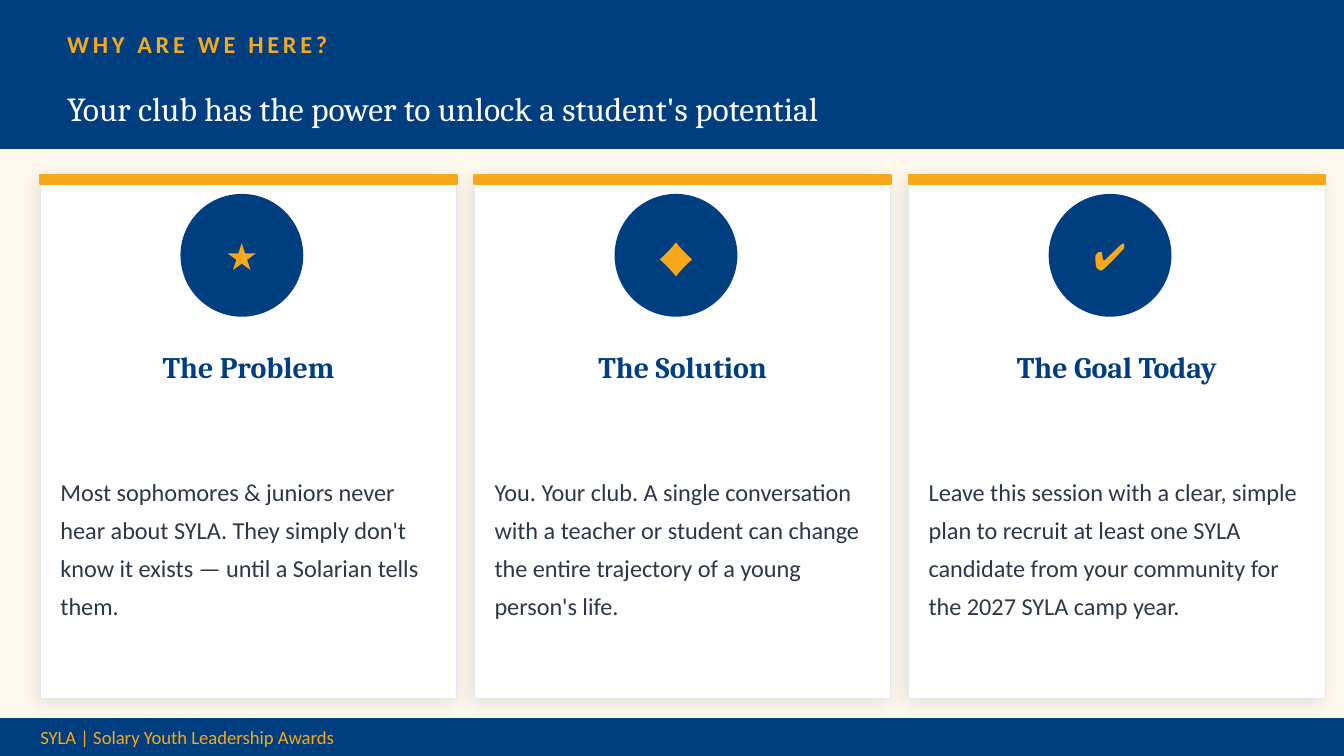
from pptx import Presentation
from pptx.dml.color import RGBColor
from pptx.enum.shapes import MSO_SHAPE as Shape
from pptx.enum.text import MSO_ANCHOR as Anchor, PP_ALIGN as Align
from pptx.oxml import parse_xml
from pptx.oxml.ns import nsdecls
from pptx.util import Pt

PX = 4572  # 200 px to the inch
WIDE, HIGH = 2000, 1125
NAVY, GOLD, WHITE = "003F7F", "F7A81B", "FFFFFF"
CREAM, EDGE, INK = "FFF8EC", "E2E8F0", "2D3748"
SANS, SERIF = "Calibri", "Cambria"

CARDS = [
    ("★", "The Problem",
     "Most sophomores & juniors never hear about SYLA. They simply don't "
     "know it exists — until a Solarian tells them."),
    ("♦", "The Solution",
     "You. Your club. A single conversation with a teacher or student can "
     "change the entire trajectory of a young person's life."),
    ("✔", "The Goal Today",
     "Leave this session with a clear, simple plan to recruit at least one "
     "SYLA candidate from your community for the 2027 SYLA camp year."),
]


def paint(color, code):
    color.rgb = RGBColor.from_string(code)


def block(slide, box, fill, kind=Shape.RECTANGLE, edge=None, width=1):
    shape = slide.shapes.add_shape(kind, *(n * PX for n in box))
    shape.shadow.inherit = False
    shape.fill.solid()
    paint(shape.fill.fore_color, fill)
    paint(shape.line.color, edge or fill)
    shape.line.width = Pt(width)
    return shape


def label(slide, box, text, size, color, face=SANS, bold=False,
          align=Align.LEFT, lead=None):
    frame = slide.shapes.add_textbox(*(n * PX for n in box)).text_frame
    frame.word_wrap = True
    frame.vertical_anchor = Anchor.MIDDLE
    frame.margin_left = frame.margin_right = 0
    frame.margin_top = frame.margin_bottom = 0
    para = frame.paragraphs[0]
    para.text = text
    para.alignment = align
    if lead:
        para.line_spacing = lead
    font = para.font
    font.size, font.name, font.bold = Pt(size), face, bold
    paint(font.color, color)
    return para


def shade(shape):
    """Give the shape a soft shadow to the lower left."""
    effects = shape._element.spPr.find("{*}effectLst")
    effects.append(parse_xml(
        f'<a:outerShdw {nsdecls("a")} blurRad="{Pt(10)}" dist="{Pt(3)}" '
        f'dir="{135 * 60000}" algn="bl" rotWithShape="0">'
        '<a:srgbClr val="000000"><a:alpha val="10000"/></a:srgbClr>'
        '</a:outerShdw>'))


def header(slide, x, y, w, h):
    block(slide, (x, y, w, h), NAVY)
    para = label(slide, (x + 100, y + 10, w - 200, 110), "WHY ARE WE HERE?",
                 13, GOLD, bold=True)
    para.runs[0].font._element.set("spc", "200")
    label(slide, (x + 100, y + 116, w - 200, 90),
          "Your club has the power to unlock a student's potential",
          18, WHITE, SERIF)


def card(slide, x, y, w, h, icon, title, body):
    shade(block(slide, (x, y, w, h), WHITE, edge=EDGE, width=0.5))
    block(slide, (x, y, w, 14), GOLD)
    disc = (x + 210, y + 30, 180, 180)
    block(slide, disc, NAVY, Shape.OVAL)
    label(slide, disc, icon, 20, GOLD, bold=True, align=Align.CENTER)
    label(slide, (x + 30, y + 240, w - 60, 90), title, 16, NAVY, SERIF,
          bold=True, align=Align.CENTER)
    label(slide, (x + 30, y + 350, w - 60, 400), body, 13, INK, lead=1.3)


def footer(slide, x, y, w, h):
    block(slide, (x, y, w, h), NAVY)
    label(slide, (x + 60, y, w - 200, h),
          "SYLA | Solary Youth Leadership Awards", 10, GOLD)


def main():
    deck = Presentation()
    deck.slide_width, deck.slide_height = WIDE * PX, HIGH * PX
    slide = deck.slides.add_slide(deck.slide_layouts[6])
    back = slide.background.fill
    back.solid()
    paint(back.fore_color, CREAM)

    header(slide, 0, 0, WIDE, 220)
    wide, gap = 620, 26
    for i, parts in enumerate(CARDS):
        card(slide, 60 + i * (wide + gap), 260, wide, 780, *parts)
    footer(slide, 0, HIGH - 55, WIDE, 55)
    deck.save("out.pptx")


if __name__ == "__main__":
    main()
